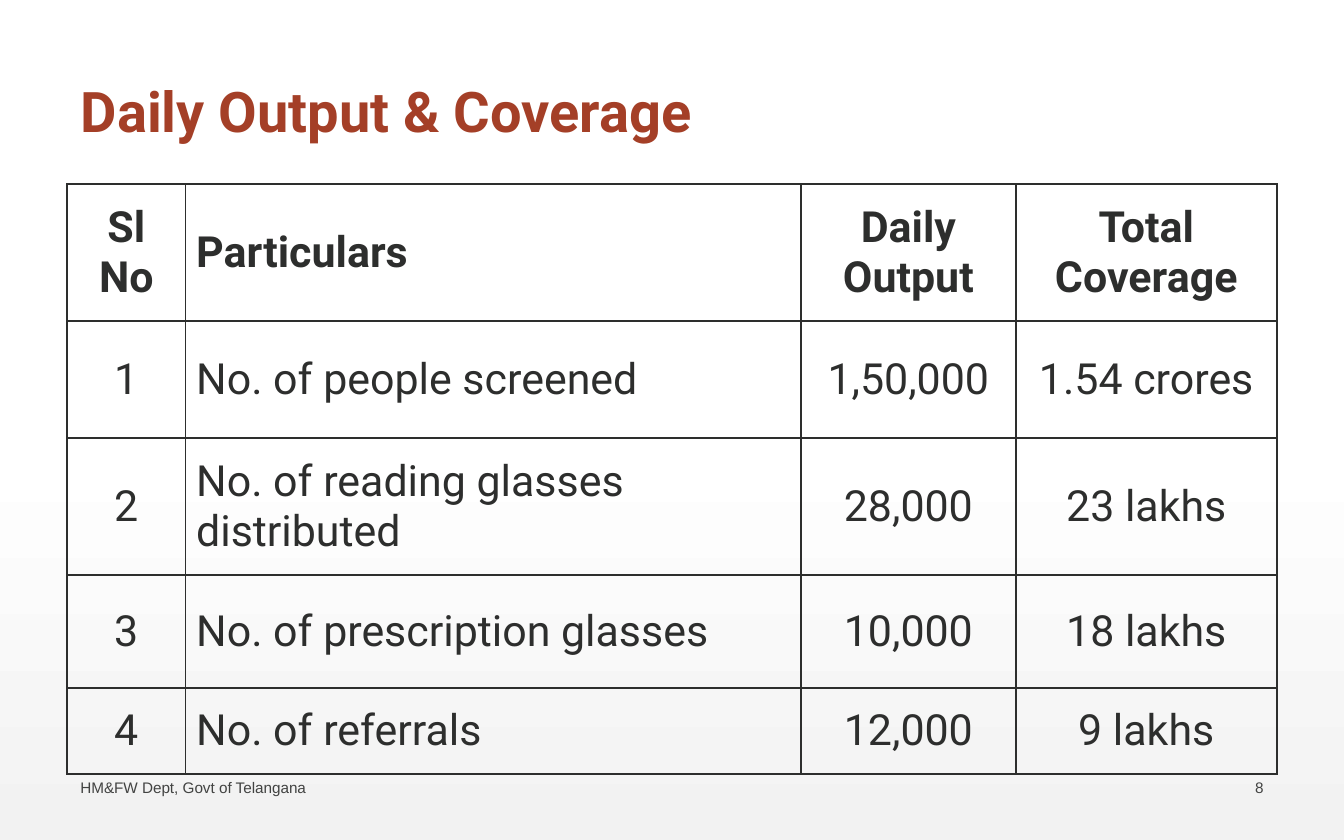
from lxml.etree import SubElement
from pptx import Presentation
from pptx.dml.color import RGBColor
from pptx.enum.text import MSO_ANCHOR, PP_ALIGN
from pptx.oxml.ns import qn
from pptx.util import Inches, Pt

COLORS = {
    "title": "A43F27",
    "ink": "2D2E2D",
    "footer": "424342",
    "page_top": "FFFFFF",
    "page_bottom": "F2F2F2",
}
COLUMN_WIDTHS = [0.88, 4.58, 1.6, 1.94]
ROW_HEIGHTS = [1.02, 0.87, 1.02, 0.84, 0.64]
COVERAGE_ROWS = [
    ("Sl No", "Particulars", "Daily Output", "Total Coverage"),
    ("1", "No. of people screened", "1,50,000", "1.54 crores"),
    ("2", "No. of reading glasses distributed", "28,000", "23 lakhs"),
    ("3", "No. of prescription glasses", "10,000", "18 lakhs"),
    ("4", "No. of referrals", "12,000", "9 lakhs"),
]


def rgb(name):
    return RGBColor.from_string(COLORS[name])


def write(frame, text, font, size, color, bold=False, align=PP_ALIGN.LEFT):
    paragraph = frame.paragraphs[0]
    paragraph.text = text
    paragraph.alignment = align
    style = paragraph.runs[0].font
    style.name, style.size, style.bold = font, Pt(size), bold
    style.color.rgb = rgb(color)
    return paragraph


def paint_background(slide):
    fill = slide.background.fill
    fill.gradient()
    fill.gradient_angle = 270
    top, bottom = fill.gradient_stops
    top.position, bottom.position = 0.53, 1
    top.color.rgb, bottom.color.rgb = rgb("page_top"), rgb("page_bottom")


def place_title(slide, left, top, width, height):
    title = slide.shapes.title
    title.left, title.top = Inches(left), Inches(top)
    title.width, title.height = Inches(width), Inches(height)
    title.text_frame.vertical_anchor = MSO_ANCHOR.MIDDLE
    heading = write(title.text_frame, "Daily Output & Coverage", "Roboto", 30, "title", True)
    heading.line_spacing = 0.9


def outline_cell(cell):
    properties = cell._tc.get_or_add_tcPr()
    for side in ("a:lnL", "a:lnR", "a:lnT", "a:lnB"):
        line = SubElement(properties, qn(side), w=str(Pt(1)))
        solid = SubElement(line, qn("a:solidFill"))
        SubElement(solid, qn("a:srgbClr"), val=COLORS["ink"])


def place_coverage_table(slide, left, top, width, height):
    table = slide.shapes.add_table(
        len(ROW_HEIGHTS), len(COLUMN_WIDTHS),
        Inches(left), Inches(top), Inches(width), Inches(height),
    ).table
    table.first_row = table.horz_banding = False
    for column, column_width in zip(table.columns, COLUMN_WIDTHS):
        column.width = Inches(column_width)
    for row, row_height in zip(table.rows, ROW_HEIGHTS):
        row.height = Inches(row_height)
    for r, values in enumerate(COVERAGE_ROWS):
        for c, value in enumerate(values):
            cell = table.cell(r, c)
            outline_cell(cell)
            cell.fill.background()
            cell.vertical_anchor = MSO_ANCHOR.MIDDLE
            cell.margin_left = cell.margin_right = Inches(0.08)
            cell.margin_top = cell.margin_bottom = Inches(0.05)
            align = PP_ALIGN.LEFT if c == 1 else PP_ALIGN.CENTER
            write(cell.text_frame, value, "Roboto", 23, "ink", r == 0, align)


def place_footer(slide, left, top, width, height):
    department_width, number_width = 5.03, 0.75
    parts = [
        ("HM&FW Dept, Govt of Telangana", left, department_width, PP_ALIGN.LEFT),
        ("8", left + width - number_width, number_width, PP_ALIGN.RIGHT),
    ]
    for text, part_left, part_width, align in parts:
        frame = slide.shapes.add_textbox(
            Inches(part_left), Inches(top), Inches(part_width), Inches(height)
        ).text_frame
        frame.word_wrap = True
        frame.vertical_anchor = MSO_ANCHOR.MIDDLE
        write(frame, text, "Arial", 8.2, "footer", align=align)


def main():
    deck = Presentation()
    deck.slide_width, deck.slide_height = Inches(10), Inches(6.25)
    slide = deck.slides.add_slide(deck.slide_layouts[5])
    paint_background(slide)
    place_title(slide, 0.5, 0.33, 9, 1.04)
    place_coverage_table(slide, 0.5, 1.37, 9, 4.39)
    place_footer(slide, 0.5, 5.76, 9, 0.2)
    deck.save("out.pptx")


if __name__ == "__main__":
    main()
